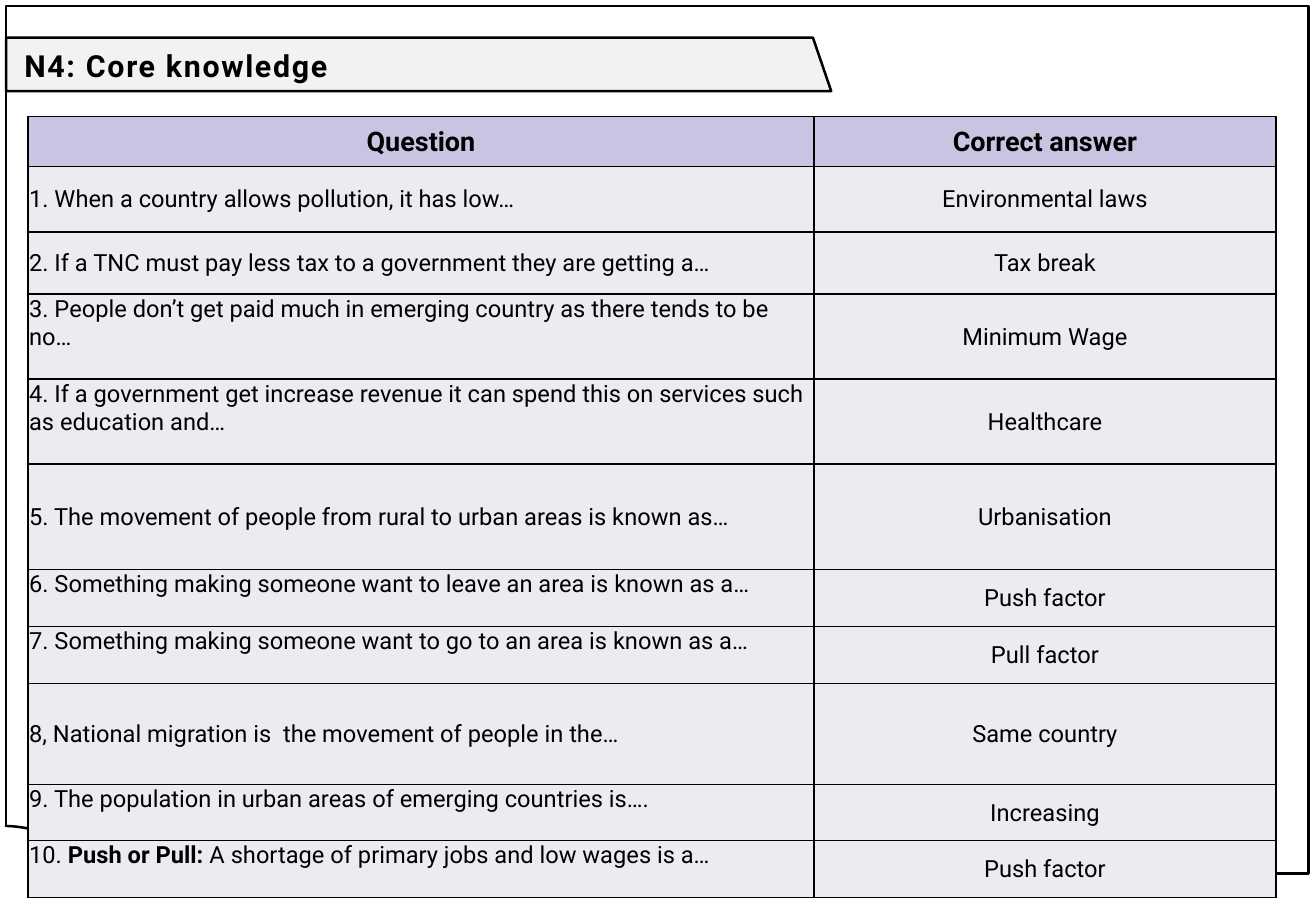
import dataclasses
import pptx
import pptx.dml.color
import pptx.enum.shapes
import pptx.enum.text
import pptx.oxml
import pptx.oxml.ns
import pptx.util

Kind = pptx.enum.shapes.MSO_SHAPE
Align = pptx.enum.text.PP_ALIGN
Anchor = pptx.enum.text.MSO_ANCHOR
WIDE, HIGH = 108.3, 75


@dataclasses.dataclass(frozen=True)
class Theme:
    font: str = "Roboto"
    ink: str = "000000"
    paper: str = "FFFFFF"
    banner: str = "F2F2F2"
    head: str = "CAC4E2"
    body: str = "EDEAF1"
    title: int = 18
    label: int = 16
    text: int = 14
    line: float = 1.5
    rule: float = 1


def unit(cells):
    return pptx.util.Inches(cells / 10)


def tint(code):
    return pptx.dml.color.RGBColor.from_string(code)


def write(frame, text, theme, size, bold=False, align=Align.LEFT,
          anchor=Anchor.MIDDLE, track=0):
    frame.word_wrap = True
    frame.vertical_anchor = anchor
    para = frame.paragraphs[0]
    para.alignment = align
    for place, part in enumerate(text.split("*")):
        run = para.add_run()
        run.text = part
        font = run.font
        font.name, font.size = theme.font, pptx.util.Pt(size)
        font.bold = bold or place % 2 == 1
        font.color.rgb = tint(theme.ink)
        if track:
            run._r.get_or_add_rPr().set("spc", str(track * 100))
    return para


class Page:
    def __init__(self, deck, theme):
        self.theme = theme
        self.slide = deck.slides.add_slide(deck.slide_layouts[5])
        self.shapes = self.slide.shapes

    def paint(self, shape, fill=None, line=True):
        shape.shadow.inherit = False
        if fill:
            shape.fill.solid()
            shape.fill.fore_color.rgb = tint(fill)
        else:
            shape.fill.background()
        if line:
            shape.line.color.rgb = tint(self.theme.ink)
            shape.line.width = pptx.util.Pt(self.theme.line)
        else:
            shape.line.fill.background()

    def shape(self, kind, box, fill=None, line=True, bend=()):
        item = self.shapes.add_shape(kind, *map(unit, box))
        for place, angle in enumerate(bend):
            item.adjustments[place] = angle * 0.6
        self.paint(item, fill, line)

    def poly(self, points, fill):
        start, *rest = [tuple(map(unit, point)) for point in points]
        pen = self.shapes.build_freeform(*start)
        pen.add_line_segments(rest, close=True)
        self.paint(pen.convert_to_shape(), fill)

    def title(self, text, box):
        item = self.shapes.title
        item.left, item.top, item.width, item.height = map(unit, box)
        para = write(item.text_frame, text, self.theme, self.theme.title,
                     bold=True, track=1)
        para.line_spacing = 1.07
        para.space_after = pptx.util.Pt(8)
        self.shapes._spTree.append(item._element)

    def edge(self, cell):
        props = cell._tc.get_or_add_tcPr()
        width = pptx.util.Pt(self.theme.rule)
        for side in "LRTB":
            props.append(pptx.oxml.parse_xml(
                f'<a:ln{side} {pptx.oxml.ns.nsdecls("a")} w="{width}">'
                f'<a:solidFill><a:srgbClr val="{self.theme.ink}"/></a:solidFill>'
                f'</a:ln{side}>'))

    def cell(self, cell, text, fill, **style):
        self.edge(cell)
        cell.fill.solid()
        cell.fill.fore_color.rgb = tint(fill)
        cell.margin_left = cell.margin_right = cell.margin_top = unit(0.1)
        cell.margin_bottom = 0
        anchor = style.pop("anchor", Anchor.MIDDLE)
        write(cell.text_frame, text, self.theme, **style)
        cell.vertical_anchor = anchor

    def table(self, left, top, cols, head, rows):
        theme = self.theme
        tall = [4.1] + [row[0] for row in rows]
        box = (left, top, sum(cols), sum(tall))
        grid = self.shapes.add_table(len(tall), len(cols), *map(unit, box)).table
        grid.horz_banding = False
        for col, width in zip(grid.columns, cols):
            col.width = unit(width)
        for row, height in zip(grid.rows, tall):
            row.height = unit(height)
        for col, text in enumerate(head):
            self.cell(grid.cell(0, col), text, theme.head, size=theme.label,
                      bold=True, align=Align.CENTER)
        for row, (_, anchor, ask, reply) in enumerate(rows, 1):
            self.cell(grid.cell(row, 0), ask, theme.body, size=theme.text,
                      anchor=anchor)
            self.cell(grid.cell(row, 1), reply, theme.body, size=theme.text,
                      align=Align.CENTER)


TOP, MID = Anchor.TOP, Anchor.MIDDLE
ROWS = [
    (5.4, MID, "1. When a country allows pollution, it has low…",
     "Environmental laws"),
    (5.1, MID, "2. If a TNC must pay less tax to a government they are getting a…",
     "Tax break"),
    (7, TOP, "3. People don’t get paid much in emerging country as there tends to be no…",
     "Minimum Wage"),
    (7, TOP, "4. If a government get increase revenue it can spend this on services "
     "such as education and…", "Healthcare"),
    (8.7, MID, "5. The movement of people from rural to urban areas is known as…",
     "Urbanisation"),
    (4.7, TOP, "6. Something making someone want to leave an area is known as a…",
     "Push factor"),
    (4.7, TOP, "7. Something making someone want to go to an area is known as a…",
     "Pull factor"),
    (8.3, MID, "8, National migration is  the movement of people in the…",
     "Same country"),
    (4.6, TOP, "9. The population in urban areas of emerging countries is….",
     "Increasing"),
    (4.7, TOP, "10. *Push or Pull: *A shortage of primary jobs and low wages is a…",
     "Push factor"),
]


def main():
    deck = pptx.Presentation()
    deck.slide_width, deck.slide_height = unit(WIDE), unit(HIGH)
    theme = Theme()
    page = Page(deck, theme)
    page.poly([(0.5, 3.1), (66.9, 3.1), (68.4, 7.5), (0.5, 7.5)], theme.banner)
    page.shape(Kind.RECTANGLE, (0.5, 0.5, 107.2, 71.4))
    page.shape(Kind.ARC, (-8.2, 68, 17, 14.5), theme.paper, bend=(270.9, 337.1))
    page.shape(Kind.RECTANGLE, (0.1, 68.1, 0.5, 1), theme.paper, line=False)
    page.title("N4: Core knowledge", (1, 2.1, 64.3, 6.3))
    page.table(2.3, 9.6, (64.7, 38), ("Question", "Correct answer"), ROWS)
    deck.save("out.pptx")


if __name__ == "__main__":
    main()
